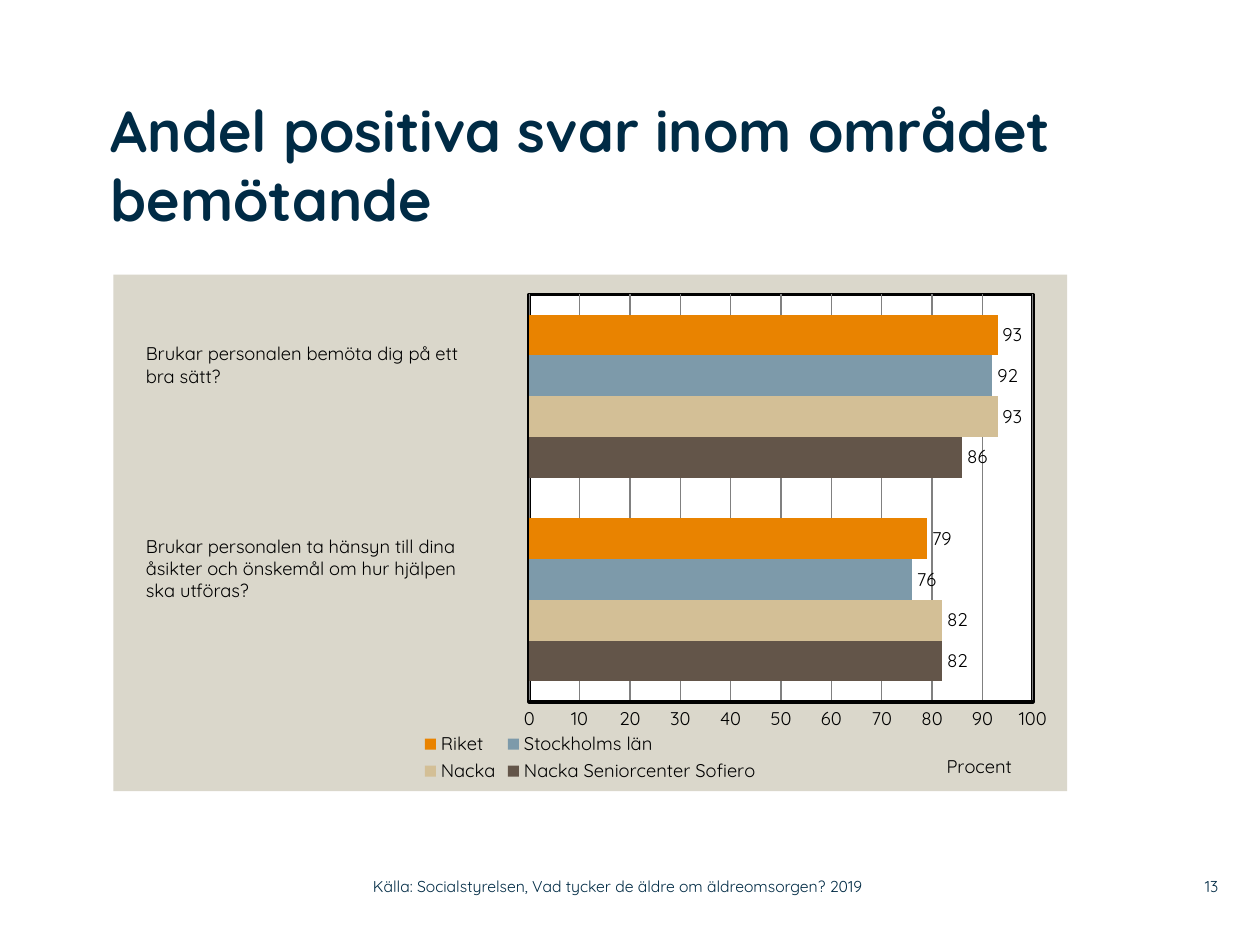
from dataclasses import dataclass

from lxml.etree import SubElement
from pptx import Presentation
from pptx.chart.data import CategoryChartData
from pptx.dml.color import RGBColor
from pptx.enum.chart import XL_CHART_TYPE, XL_LABEL_POSITION, XL_LEGEND_POSITION, XL_TICK_MARK
from pptx.enum.text import MSO_ANCHOR, PP_ALIGN
from pptx.oxml import parse_xml
from pptx.oxml.ns import nsdecls, qn
from pptx.util import Inches, Pt


@dataclass(frozen=True)
class Theme:
    font: str = "Quicksand"
    navy: str = "002B45"
    black: str = "000000"
    panel: str = "DAD7CB"
    white: str = "FFFFFF"
    grid: str = "808080"
    title: float = 33
    body: float = 10.5
    footer: float = 9
    border: float = 2


THEME = Theme()
SERIES = [
    ("Nacka Seniorcenter Sofiero", (82, 86), "635549"),
    ("Nacka", (82, 93), "D3BF96"),
    ("Stockholms län", (76, 92), "7D9AAA"),
    ("Riket", (79, 93), "E98300"),
]
QUESTIONS = [
    ((1.06, 2.67, 2.97, 0.45), ["Brukar personalen bemöta dig på ett", "bra sätt?"]),
    ((1.06, 4.2, 2.99, 0.63), [
        "Brukar personalen ta hänsyn till dina",
        "åsikter och önskemål om hur hjälpen",
        "ska utföras?",
    ]),
]


def style_font(font, size, color, bold=False):
    font.name = THEME.font
    font.size = Pt(size)
    font.bold = bold
    font.color.rgb = RGBColor.from_string(color)


def add_text(slide, box, lines, size, color, bold=False, inset=0.0,
             anchor=MSO_ANCHOR.TOP, align=PP_ALIGN.LEFT):
    frame = slide.shapes.add_textbox(*map(Inches, box)).text_frame
    frame.word_wrap = True
    frame.vertical_anchor = anchor
    frame.margin_left = frame.margin_right = Inches(inset)
    frame.margin_top = frame.margin_bottom = Inches(inset / 2)
    frame.text = "\n".join(lines)
    for paragraph in frame.paragraphs:
        paragraph.alignment = align
        style_font(paragraph.font, size, color, bold)


def area_format(fill, border=None):
    line = "<a:noFill/>"
    if border:
        line = f'<a:solidFill><a:srgbClr val="{border}"/></a:solidFill>'
    return parse_xml(
        f'<c:spPr {nsdecls("c", "a")}><a:solidFill><a:srgbClr val="{fill}"/></a:solidFill>'
        f'<a:ln w="{Pt(THEME.border)}">{line}</a:ln></c:spPr>'
    )


def place_before(successor, x, y, w=None, h=None, target=None):
    parent = successor.getparent()
    for old in parent.findall(qn("c:layout")):
        parent.remove(old)
    layout = parse_xml(f'<c:layout {nsdecls("c")}><c:manualLayout/></c:layout>')
    settings = {"layoutTarget": target, "xMode": "edge", "yMode": "edge",
                "x": x, "y": y, "w": w, "h": h}
    for tag, value in settings.items():
        if value is not None:
            SubElement(layout[0], qn(f"c:{tag}")).set("val", str(value))
    successor.addprevious(layout)


def format_percent_axis(axis):
    axis.minimum_scale, axis.maximum_scale, axis.major_unit = 0, 100, 10
    axis.major_tick_mark = axis.minor_tick_mark = XL_TICK_MARK.NONE
    axis.format.line.color.rgb = RGBColor.from_string(THEME.black)
    axis.format.line.width = Pt(THEME.border)
    axis.has_major_gridlines = True
    gridline = axis.major_gridlines.format.line
    gridline.color.rgb = RGBColor.from_string(THEME.grid)
    gridline.width = Pt(0.75)
    style_font(axis.tick_labels.font, THEME.body, THEME.black)
    axis.axis_title.text_frame.text = "Procent"
    style_font(axis.axis_title.text_frame.paragraphs[0].font, THEME.body, THEME.black)
    title = axis.axis_title._element
    place_before(title.find(qn("c:overlay")), 0.87, 0.92)


def add_answers_chart(slide, box):
    answers = CategoryChartData()
    answers.categories = ["1", "2"]
    for name, values, _ in SERIES:
        answers.add_series(name, values)
    chart = slide.shapes.add_chart(
        XL_CHART_TYPE.BAR_CLUSTERED, *map(Inches, box), answers
    ).chart
    style_font(chart.font, THEME.body, THEME.black)
    chart.has_title = False
    chart.category_axis.visible = False
    format_percent_axis(chart.value_axis)

    bars = chart.plots[0]
    bars.gap_width = 100
    bars.overlap = 0
    bars.vary_by_categories = False
    for series, (_, _, color) in zip(bars.series, SERIES):
        series.format.fill.solid()
        series.format.fill.fore_color.rgb = RGBColor.from_string(color)
        series.invert_if_negative = False
    bars.has_data_labels = True
    bars.data_labels.show_value = True
    bars.data_labels.position = XL_LABEL_POSITION.OUTSIDE_END
    style_font(bars.data_labels.font, THEME.body, THEME.black)

    chart.has_legend = True
    chart.legend.position = XL_LEGEND_POSITION.BOTTOM
    chart.legend.include_in_layout = False
    style_font(chart.legend.font, THEME.body, THEME.black)
    place_before(chart.legend._element.find(qn("c:overlay")), 0.32, 0.88, 0.36, 0.11)

    chart_part = chart._chartSpace.find(qn("c:chart"))
    chart_part.addnext(area_format(THEME.panel))
    plot_area = chart_part.find(qn("c:plotArea"))
    place_before(plot_area.find(qn("c:barChart")), 0.436, 0.038, 0.528, 0.789, "inner")
    plot_area.append(area_format(THEME.white, THEME.black))


def add_questions(slide):
    for box, lines in QUESTIONS:
        add_text(slide, box, lines, THEME.body, THEME.black, inset=0.1)


def add_footer(slide, left, top, width, height):
    add_text(slide, (left, top, 4.43, height),
             ["Källa: Socialstyrelsen, Vad tycker de äldre om äldreomsorgen? 2019"],
             THEME.footer, THEME.navy, anchor=MSO_ANCHOR.MIDDLE)
    number_width = 0.47
    add_text(slide, (left + width - number_width, top, number_width, height), ["13"],
             THEME.footer, THEME.navy, anchor=MSO_ANCHOR.MIDDLE, align=PP_ALIGN.RIGHT)


def main():
    deck = Presentation()
    deck.slide_width, deck.slide_height = Inches(10), Inches(7.5)
    slide = deck.slides.add_slide(deck.slide_layouts[6])
    add_answers_chart(slide, (0.9, 2.18, 7.57, 4.1))
    add_text(slide, (0.88, 0.75, 7.6, 1.42),
             ["Andel positiva svar inom området bemötande"],
             THEME.title, THEME.navy, bold=True)
    add_questions(slide)
    add_footer(slide, 2.96, 6.89, 6.71, 0.29)
    deck.save("out.pptx")


if __name__ == "__main__":
    main()
